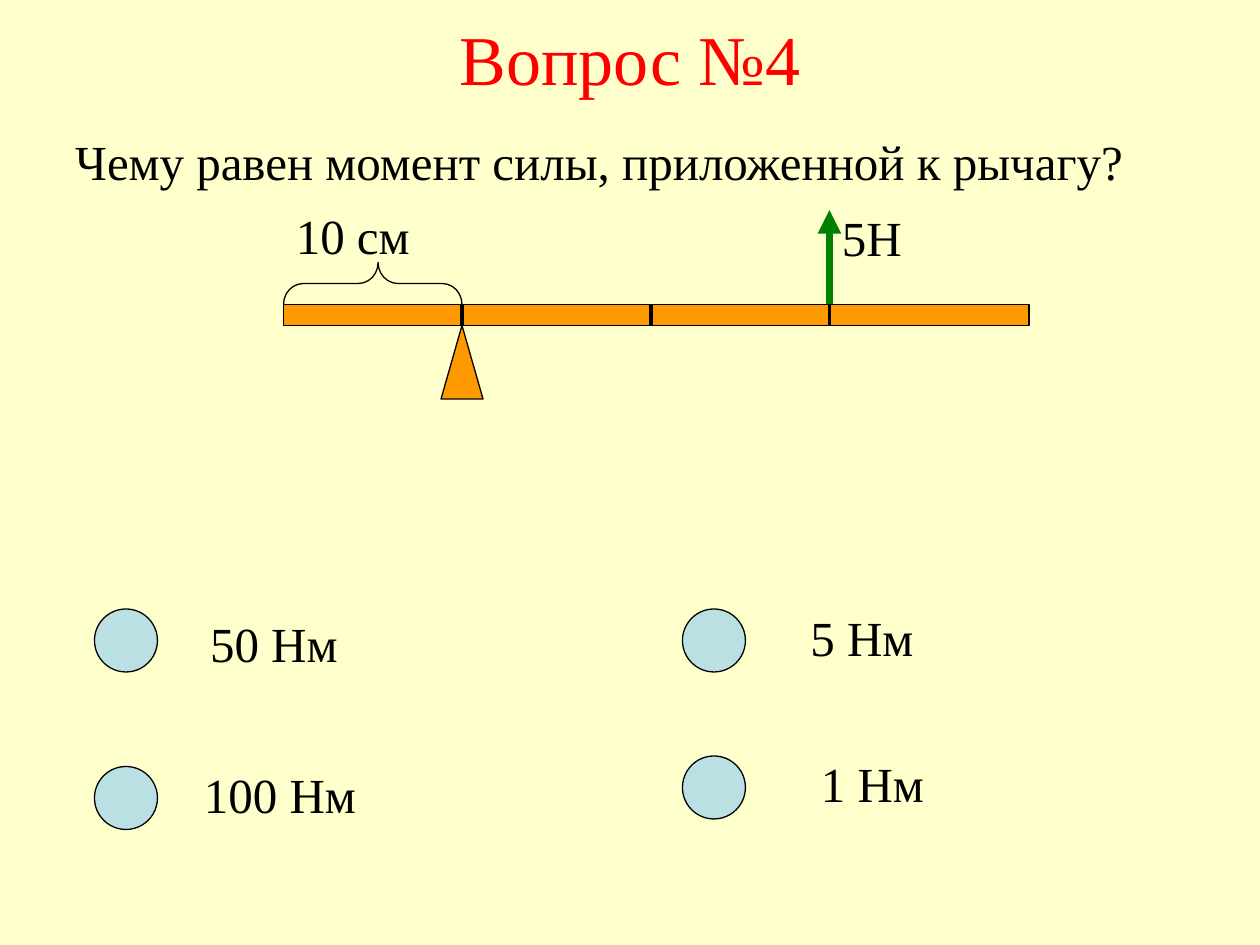
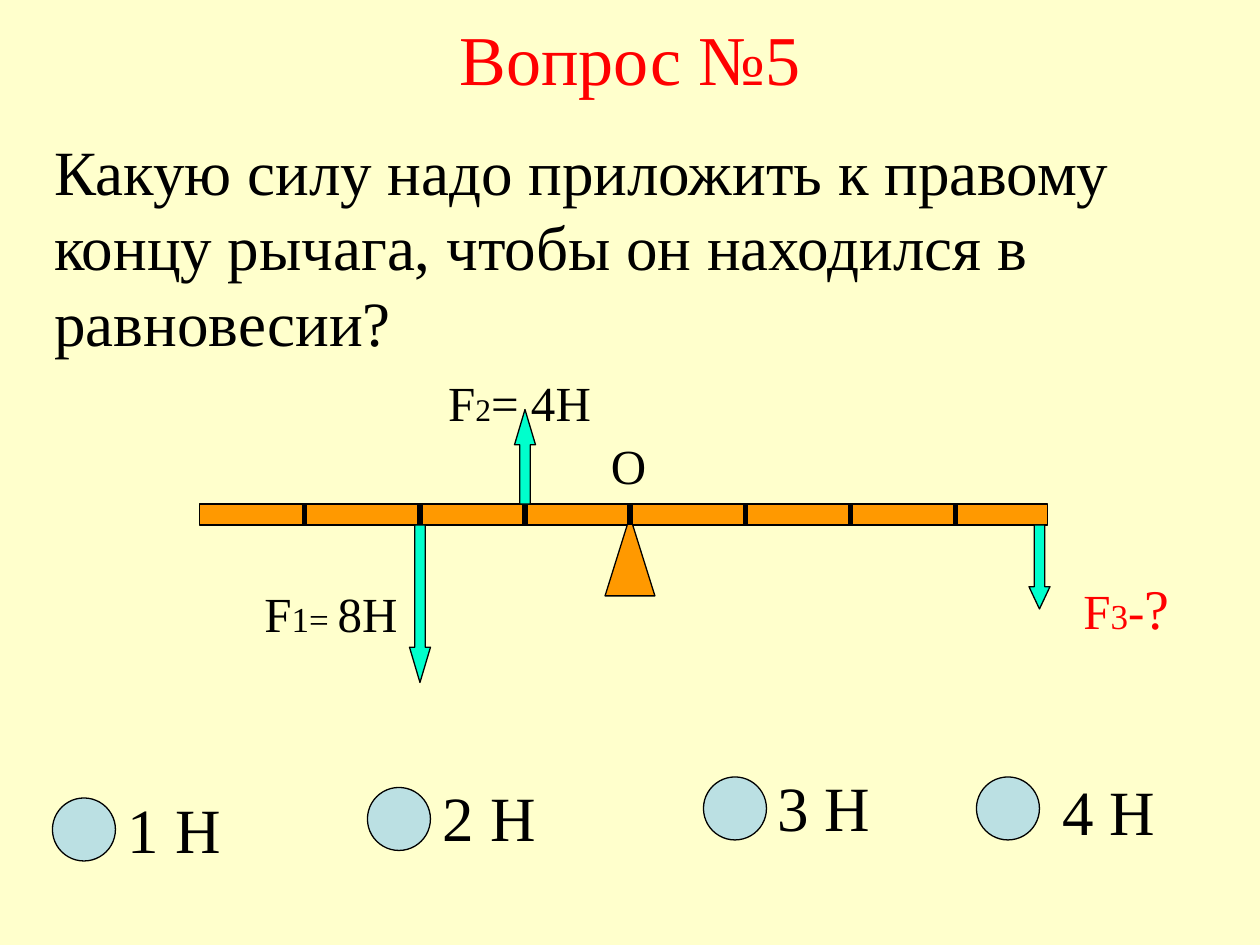
"""Builds two physics quiz slides about levers and moments of force."""
import pptx
import pptx.dml.color
import pptx.enum.shapes
import pptx.enum.text
import pptx.oxml.ns
import pptx.util
from lxml import etree

Pt = pptx.util.Pt
SHAPE = pptx.enum.shapes.MSO_SHAPE
ALIGN = pptx.enum.text.PP_ALIGN
AUTO = pptx.enum.text.MSO_AUTO_SIZE
ANCHOR = pptx.enum.text.MSO_ANCHOR
BACK, BLACK, RED, GREEN = "FFFFCC", "000000", "FF0000", "008000"
WOOD, FORCE, BUTTON = "FF9900", "00FFCC", "BBE0E3"


def color(value):
    return pptx.dml.color.RGBColor.from_string(value)


class Quiz:
    font = "Times New Roman"
    lever_height = 12
    button_size = 36

    def __init__(self, prs):
        self.prs = prs
        self.s = None
        fill = prs.slide_master.background.fill
        fill.solid()
        fill.fore_color.rgb = color(BACK)

    def slide(self, title, x, width):
        self.s = self.prs.slides.add_slide(self.prs.slide_layouts[5])
        sp = self.s.shapes.title
        box = {"left": x, "top": 0, "width": width, "height": 66}
        for name, value in box.items():
            setattr(sp, name, Pt(value))
        sp.text_frame.vertical_anchor = ANCHOR.MIDDLE
        self.add_runs(sp.text_frame.paragraphs[0], [(title, 40)], RED, ALIGN.CENTER)

    def add_runs(self, p, runs, ink=BLACK, align=ALIGN.LEFT):
        p.alignment = align
        for text, size in runs:
            r = p.add_run()
            r.text = text
            for name, value in {"name": self.font, "size": Pt(size)}.items():
                setattr(r.font, name, value)
            r.font.color.rgb = color(ink)

    def text(self, x, y, w, h, runs, ink=BLACK, align=ALIGN.LEFT, wrap=False):
        tf = self.s.shapes.add_textbox(Pt(x), Pt(y), Pt(w), Pt(h)).text_frame
        tf.auto_size = AUTO.NONE if wrap else AUTO.SHAPE_TO_FIT_TEXT
        tf.word_wrap = wrap
        self.add_runs(tf.paragraphs[0], runs, ink, align)
        return tf

    def shape(self, kind, x, y, w, h, fill=None, adjust=()):
        sp = self.s.shapes.add_shape(kind, Pt(x), Pt(y), Pt(w), Pt(h))
        sp.shadow.inherit = False
        if fill:
            sp.fill.solid()
            sp.fill.fore_color.rgb = color(fill)
        else:
            sp.fill.background()
        sp.line.color.rgb = color(BLACK)
        sp.line.width = Pt(0.75)
        for i, value in enumerate(adjust):
            sp.adjustments[i] = value
        return sp

    def line(self, x, bottom, top, weight, ink=BLACK, arrow=False):
        kind = pptx.enum.shapes.MSO_CONNECTOR.STRAIGHT
        sp = self.s.shapes.add_connector(kind, Pt(x), Pt(bottom), Pt(x), Pt(top))
        sp.line.color.rgb = color(ink)
        sp.line.width = Pt(weight)
        spPr = sp._element.spPr
        if arrow:
            etree.SubElement(spPr.get_or_add_ln(),
                             pptx.oxml.ns.qn("a:tailEnd"), type="triangle")
        etree.SubElement(spPr, pptx.oxml.ns.qn("a:effectLst"))

    def lever(self, x, y, w):
        self.shape(SHAPE.RECTANGLE, x, y, w, self.lever_height, WOOD)

    def ticks(self, y, weight, xs):
        for x in xs:
            self.line(x, y + self.lever_height, y, weight)

    def fulcrum(self, x, y, w, h):
        self.shape(SHAPE.ISOSCELES_TRIANGLE, x, y, w, h, WOOD)

    def force(self, kind, x, y, h, head=1.68):
        self.shape(kind, x, y, 12, h, FORCE, (0.5, head))

    def answers(self, size, height, rows):
        for text, bx, by, x, y, w in rows:
            self.shape(SHAPE.FLOWCHART_CONNECTOR, bx, by, self.button_size,
                       self.button_size, BUTTON)
            self.text(x, y, w, height, [(text, size)])


def moment_slide(q):
    q.slide("Вопрос №4", 54, 612)
    q.text(34.5, 71.5, 615.5, 41,
           [("Чему равен момент силы, приложенной к рычагу?", 28)], align=ALIGN.CENTER)
    top = 174
    q.lever(162, top, 426)
    q.ticks(top, 2.25, (264, 372, 474))
    q.fulcrum(252, top + q.lever_height, 24, 42)
    q.text(162, 114, 80, 41, [("10 см", 28)])
    q.shape(SHAPE.LEFT_BRACE, 201, 111, 24, 102, adjust=(0.47, 0.47)).rotation = 90
    q.line(474, top, 120, 4.5, GREEN, arrow=True)
    q.text(474, 115, 49, 41, [("5Н", 28)])
    q.answers(28, 41, [("50 Нм", 54, 348, 113, 347, 88),
                       ("100 Нм", 54, 438, 109.5, 433.5, 102),
                       ("5 Нм", 390, 348, 456, 343.5, 74),
                       ("1 Нм", 390, 432, 462, 427, 74)])


def balance_slide(q):
    q.slide("Вопрос №5", 60, 600)
    top = 288
    below = top + q.lever_height
    q.lever(114, top, 484.5)
    q.fulcrum(345.75, 295, 28.5, 45.5)
    q.force(SHAPE.DOWN_ARROW, 234, below, 90)
    q.force(SHAPE.DOWN_ARROW, 588, below, 48, 1.06)
    q.text(144, 330, 91.5, 41, [("F", 28), ("1= ", 20), ("8H", 28)])
    q.text(612, 324, 64, 46, [("F", 28), ("3", 20), ("-", 28), ("?", 32)], RED)
    q.ticks(top, 3, (174, 240, 300, 360, 426, 486, 546))
    q.text(342, 245.5, 34.5, 41, [("О", 28)])
    tf = q.text(24, 72, 696, 269, [("Какую силу надо приложить к правому концу рычага, "
                                   "чтобы он находился в равновесии?", 36)], wrap=True)
    p = tf.add_paragraph()
    p._p.get_or_add_pPr().set("marL", str(Pt(225)))
    p.space_before = Pt(8)
    q.add_runs(p, [("F", 28), ("2", 18), ("= 4H", 28)])
    q.answers(36, 50.5, [("1 Н", 30, 456, 66, 448, 67.5),
                         ("2 Н", 210, 450, 246, 441.5, 67.5),
                         ("3 Н", 402, 444, 437, 435.5, 67.5),
                         ("4 Н", 558, 444, 600, 438, 67.5)])
    q.force(SHAPE.UP_ARROW, 294, 234, 54)


def main():
    prs = pptx.Presentation()
    prs.slide_width, prs.slide_height = Pt(720), Pt(540)
    q = Quiz(prs)
    moment_slide(q)
    balance_slide(q)
    prs.save("out.pptx")


if __name__ == "__main__":
    main()
